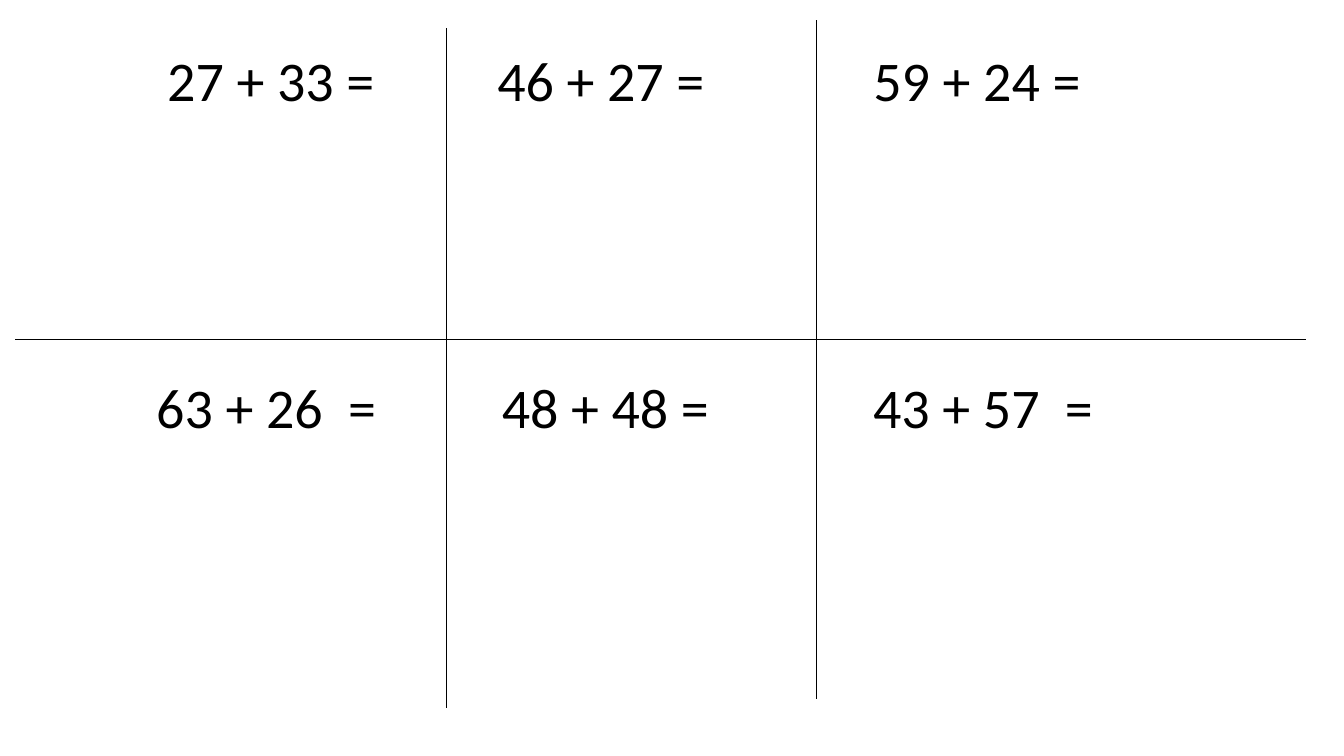
from pptx import Presentation
from pptx.dml.color import RGBColor
from pptx.enum.shapes import MSO_CONNECTOR
from pptx.enum.text import MSO_AUTO_SIZE, PP_ALIGN
from pptx.oxml.ns import qn
from pptx.util import Inches, Pt
from lxml.etree import SubElement


def color(hex_string):
    return RGBColor.from_string(hex_string)


INK = "000000"
SUM_HEIGHT = 0.77
ROW_TOPS = (0.4, 3.65)
SUM_ROWS = (
    (("27 + 33 =", 0.79, 3.79, 0.1),
     ("46 + 27 =", 4.19, 3.79, 0.35),
     ("59 + 24 =", 7.92, 3.79, 0.35)),
    (("63 + 26  =", 0.87, 3.79, 0.35),
     ("48 + 48 =", 4.58, 3.1, 0.35),
     ("43 + 57  =", 7.98, 3.79, 0.35)),
)
DIVIDERS = (
    (0.15, 3.37, 12.95, 3.37),
    (4.43, 0.28, 4.43, 7.02),
    (8.1, 0.2, 8.1, 6.93),
)

deck = Presentation()
deck.slide_width = Inches(13.33)
deck.slide_height = Inches(7.5)
worksheet = deck.slides.add_slide(deck.slide_layouts[6])

for ends in DIVIDERS:
    divider = worksheet.shapes.add_connector(
        MSO_CONNECTOR.STRAIGHT, *(Inches(end) for end in ends))
    divider.line.color.rgb = color(INK)
    divider.line.width = Pt(0.5)
    SubElement(divider._element.spPr, qn("a:effectLst"))

for top, sums in zip(ROW_TOPS, SUM_ROWS):
    for wording, left, width, right_margin in sums:
        problem = worksheet.shapes.add_textbox(
            Inches(left), Inches(top), Inches(width), Inches(SUM_HEIGHT)).text_frame
        problem.word_wrap = True
        problem.auto_size = MSO_AUTO_SIZE.SHAPE_TO_FIT_TEXT
        problem.margin_right = Inches(right_margin)
        problem.text = wording
        line = problem.paragraphs[0]
        line.alignment = PP_ALIGN.CENTER
        line.font.name = "Calibri"
        line.font.size = Pt(40)
        line.font.color.rgb = color(INK)

deck.save("out.pptx")
